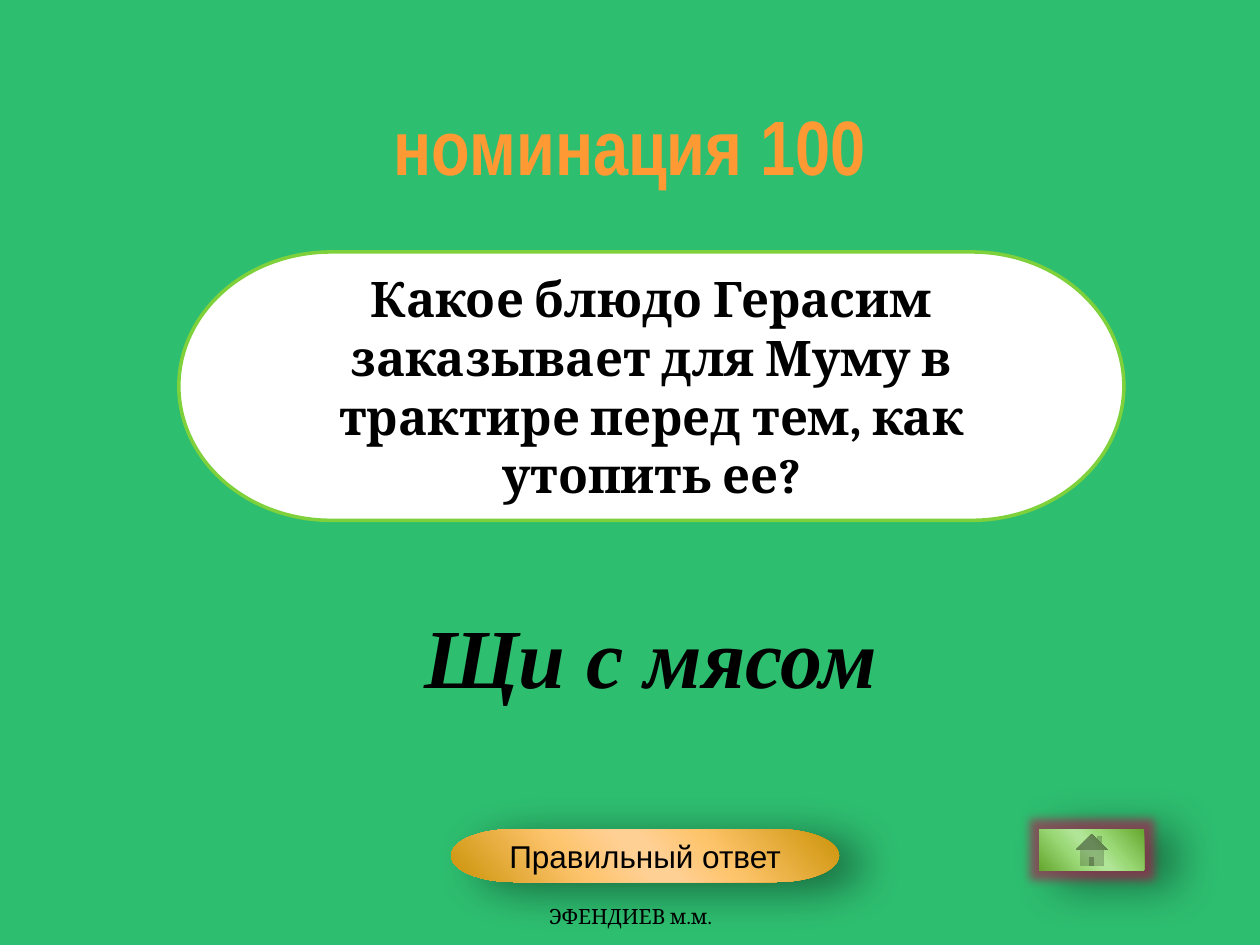
from lxml import etree
from pptx import Presentation
from pptx import util as u
from pptx.dml.color import RGBColor
from pptx.enum import shapes, text
from pptx.oxml.ns import qn

PX = 9144  # 100 px to the inch
KIND = shapes.MSO_SHAPE
MID, LOW = text.MSO_ANCHOR.MIDDLE, text.MSO_ANCHOR.BOTTOM

TITLE = ("номинация 100", (250, 80, 500, 70),
         dict(name="Arial Narrow", size=44, bold=True, color="FF9933"))
ANSWER = ("Щи с мясом", (175, 475, 683, 91),
          dict(name="Times New Roman", size=48, bold=True, italic=True))
QUERY = ("Какое блюдо Герасим заказывает для Муму в трактире перед тем, как утопить ее?",
         (142, 200, 750, 213), dict(name="Cambria", size=28, bold=True))
REPLY = ("Правильный ответ", (358, 658, 308, 42), dict(name="Arial", size=18))
AUTHOR = ("ЭФЕНДИЕВ м.м.", (342, 702, 317, 40), dict(name="Cambria", size=12))
HOME = (825, 658, 83, 33)

STOPS = (0, 33, 47, 53, 68, 100)
GOLD = ("CB9308", "FEC46B", "FFD094", "FFD094", "FEC46D", "CB9308")
GREEN = ("66A72F", "99D874", "B0E496", "B0E496", "9AD876", "66A72F")


def rgb(code):
    return RGBColor.from_string(code)


def emu(box):
    return [n * PX for n in box]


def write(shape, words, form, anchor=MID):
    frame = shape.text_frame
    frame.word_wrap = True
    frame.auto_size = text.MSO_AUTO_SIZE.NONE
    frame.vertical_anchor = anchor
    para = frame.paragraphs[0]
    para.alignment = text.PP_ALIGN.CENTER
    run = para.add_run()
    run.text = words
    form = {"color": "000000", **form}
    run.font.color.rgb = rgb(form.pop("color"))
    form["size"] = u.Pt(form["size"])
    for key, value in form.items():
        setattr(run.font, key, value)


def node(parent, tag, **attrs):
    return etree.SubElement(parent, qn("a:" + tag),
                            {k: str(v) for k, v in attrs.items()})


def tint(parent, code, alpha):
    node(node(parent, "srgbClr", val=code), "alpha", val=alpha * 1000)


def shape(kind, box):
    item = slide.shapes.add_shape(kind, *emu(box))
    item.shadow.inherit = False
    return item


def button(kind, box, hues, glow=None):
    """Add a shape with a slanted gradient, a soft shadow and perhaps a glow."""
    item = shape(kind, box)
    item.line.fill.background()
    item.fill.gradient()
    props = item.fill._xPr
    grad = props.find(qn("a:gradFill"))
    for child in list(grad):
        grad.remove(child)
    stops = node(grad, "gsLst")
    for pos, hue in zip(STOPS, hues):
        node(node(stops, "gs", pos=pos * 1000), "srgbClr", val=hue)
    node(grad, "lin", ang=139 * 60000, scaled=1)
    effects = props.find(qn("a:effectLst"))
    if glow:
        tint(node(effects, "glow", rad=u.Pt(11)), glow, 60)
    tint(node(effects, "outerShdw", blurRad=u.Pt(26), dist=u.Pt(15),
              dir=18 * 60000, algn="ctr", rotWithShape=0), "000000", 45)
    return item


deck = Presentation()
deck.slide_width, deck.slide_height = u.Inches(10), u.Inches(7.5)
slide = deck.slides.add_slide(deck.slide_layouts[5])
slide.background.fill.solid()
slide.background.fill.fore_color.rgb = rgb("2EBE70")

words, box, form = TITLE
title = slide.shapes.title
title.left, title.top, title.width, title.height = emu(box)
write(title, words, form)

for (words, box, form), anchor in ((ANSWER, text.MSO_ANCHOR.TOP), (AUTHOR, LOW)):
    write(slide.shapes.add_textbox(*emu(box)), words, form, anchor)

words, box, form = QUERY
query = shape(KIND.FLOWCHART_TERMINATOR, box)
query.fill.solid()
query.fill.fore_color.rgb = rgb("FFFFFF")
query.line.color.rgb = rgb("7FD13B")
query.line.width = u.Pt(2)
write(query, words, form)

words, box, form = REPLY
write(button(KIND.FLOWCHART_TERMINATOR, box, GOLD), words, form)
button(KIND.ACTION_BUTTON_HOME, HOME, GREEN, glow="B5154F")

deck.save("out.pptx")
